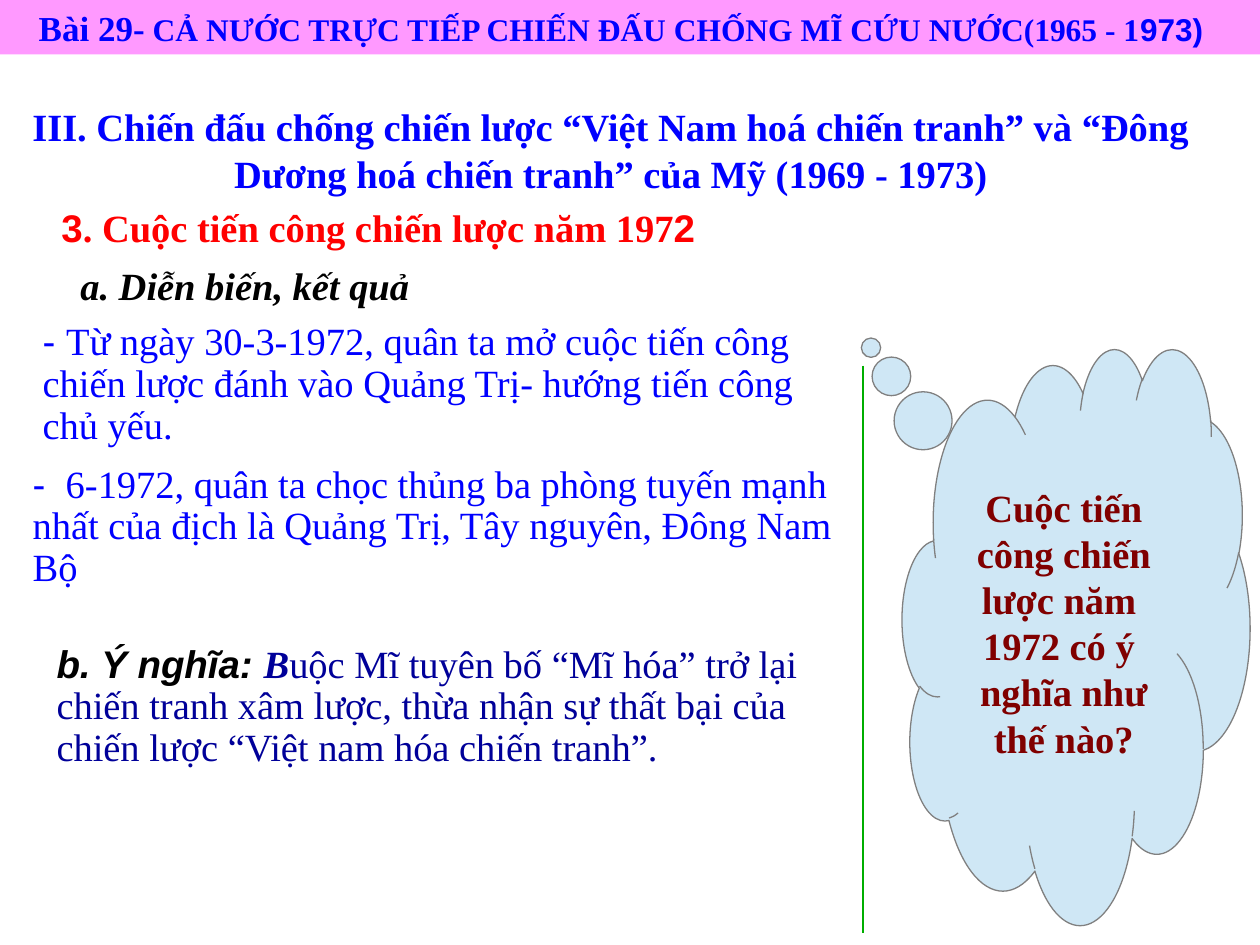
"""Build the lesson slide on the 1972 strategic offensive."""
from lxml import etree
from pptx import Presentation
from pptx.dml.color import RGBColor
from pptx.enum import shapes, text
from pptx.oxml.ns import qn
from pptx.util import Cm, Pt

BLUE = RGBColor(0x00, 0x00, 0xFF)
NAVY = RGBColor(0x00, 0x00, 0x99)
RED = RGBColor(0xFF, 0x00, 0x00)
BLACK = RGBColor(0x00, 0x00, 0x00)
MAROON = RGBColor(0x80, 0x00, 0x00)
PINK = RGBColor(0xFF, 0x99, 0xFF)
SKY = RGBColor(0xCF, 0xE7, 0xF5)
GRAY = RGBColor(0x80, 0x80, 0x80)
GREEN = RGBColor(0x00, 0xAE, 0x00)
SERIF, SANS = "Times New Roman", "Arial"
LEFT, CENTER = text.PP_ALIGN.LEFT, text.PP_ALIGN.CENTER

BANNER = [
    ("Bài 29-", SERIF, 20, BLUE, "b"),
    (" CẢ NƯỚC TRỰC TIẾP CHIẾN ĐẤU CHỐNG MĨ CỨU NƯỚC(1965 - 1", SERIF, 18, BLUE, "b"),
    ("973)", SANS, 18, BLUE, "b"),
]
HEADINGS = [
    ((-0.2, 1.96, 25.02, 3.05), CENTER, [
        ("III. Chiến đấu chống chiến lược “Việt Nam hoá chiến tranh” và “Đông Dương hoá "
         "chiến tranh” của Mỹ (1969 - 1973)", SERIF, 22, BLUE, "b")]),
    ((0.99, 3.99, 24.2, 1.2), LEFT, [
        ("3", SANS, 22, RED, "b"),
        (". Cuộc tiến công chiến lược năm 197", SERIF, 22, RED, "b"),
        ("2", SANS, 22, RED, "b")]),
    ((1.37, 5.16, 7.6, 1.2), LEFT, [
        ("a. Diễn biến, kết quả", SERIF, 22, BLACK, "bi")]),
]
NOTES = [
    ((0.61, 6.38, 16.41, 3.02), LEFT, [
        ("- ", SANS, 22, BLUE, ""),
        ("Từ ngày 30-3-1972, quân ta mở cuộc tiến công chiến lược đánh vào Quảng Trị- "
         "hướng tiến công chủ yếu.", SERIF, 22, BLUE, "")]),
    ((0.41, 9.25, 16.79, 3.05), LEFT, [
        ("- ", SANS, 22, BLUE, ""),
        (" 6-1972, quân ta chọc thủng ba phòng tuyến mạnh nhất của địch là Quảng Trị, "
         "Tây nguyên, Đông Nam Bộ", SERIF, 22, BLUE, "")]),
    ((0.89, 12.88, 16.33, 4.57), LEFT, [
        ("b. Ý nghĩa: ", SANS, 22, BLACK, "bi"),
        ("B", SERIF, 22, NAVY, "bi"),
        ("uộc Mĩ tuyên bố “Mĩ hóa” trở lại chiến tranh xâm lược, thừa nhận sự thất bại của "
         "chiến lược “Việt nam hóa chiến tranh”.", SERIF, 22, NAVY, "")]),
]
QUESTION = ["Cuộc tiến", " công chiến ", "lược năm ", "1972 có ý ", "nghĩa như", "thế nào?"]


def write(para, spans, align):
    para.alignment = align
    for words, font, size, color, style in spans:
        span = para.add_run()
        span.text = words
        span.font.name = font
        span.font.size = Pt(size)
        span.font.color.rgb = color
        span.font.bold = "b" in style
        span.font.italic = "i" in style


def add_text(page, place, align, spans):
    box = page.shapes.add_textbox(*map(Cm, place))
    box.text_frame.word_wrap = True
    para = box.text_frame.paragraphs[0]
    write(para, spans, align)
    return para


def add_filled(page, preset, place, color):
    shape = page.shapes.add_shape(preset, *map(Cm, place))
    shape.shadow.inherit = False
    shape.fill.solid()
    shape.fill.fore_color.rgb = color
    shape.text_frame.vertical_anchor = text.MSO_ANCHOR.MIDDLE
    return shape


def add_divider(page):
    line = page.shapes.add_connector(
        shapes.MSO_CONNECTOR.STRAIGHT, *map(Cm, (17.4, 7.37, 17.4, 18.8)))
    line.line.color.rgb = GREEN
    line.line.width = Pt(0.75)
    etree.SubElement(line._element.spPr, qn("a:effectLst"))


def add_cloud(page):
    cloud = add_filled(page, shapes.MSO_SHAPE.CLOUD_CALLOUT, (18.19, 7.01, 7.01, 11.61), SKY)
    cloud.adjustments[0] = -0.59
    cloud.adjustments[1] = -0.5
    cloud.line.color.rgb = GRAY
    cloud.line.width = Pt(0.75)
    frame = cloud.text_frame
    frame.word_wrap = False
    for index, words in enumerate(QUESTION):
        para = frame.add_paragraph() if index else frame.paragraphs[0]
        write(para, [(words, SERIF, 22, MAROON, "b")], CENTER)


def add_banner(page):
    banner = add_filled(page, shapes.MSO_SHAPE.RECTANGLE, (0, 0, 25.4, 1.1), PINK)
    banner.line.fill.background()
    banner.text_frame.margin_left = Cm(0.78)
    write(banner.text_frame.paragraphs[0], BANNER, LEFT)


def main():
    deck = Presentation()
    deck.slide_width, deck.slide_height = Cm(25.4), Cm(19.05)
    page = deck.slides.add_slide(deck.slide_layouts[6])
    add_divider(page)
    for heading in HEADINGS:
        add_text(page, *heading)
    for note in NOTES:
        para = add_text(page, *note)
        para.line_spacing = 0.9
        para.space_before = Pt(7)
    add_cloud(page)
    add_banner(page)
    deck.save("out.pptx")


if __name__ == "__main__":
    main()
